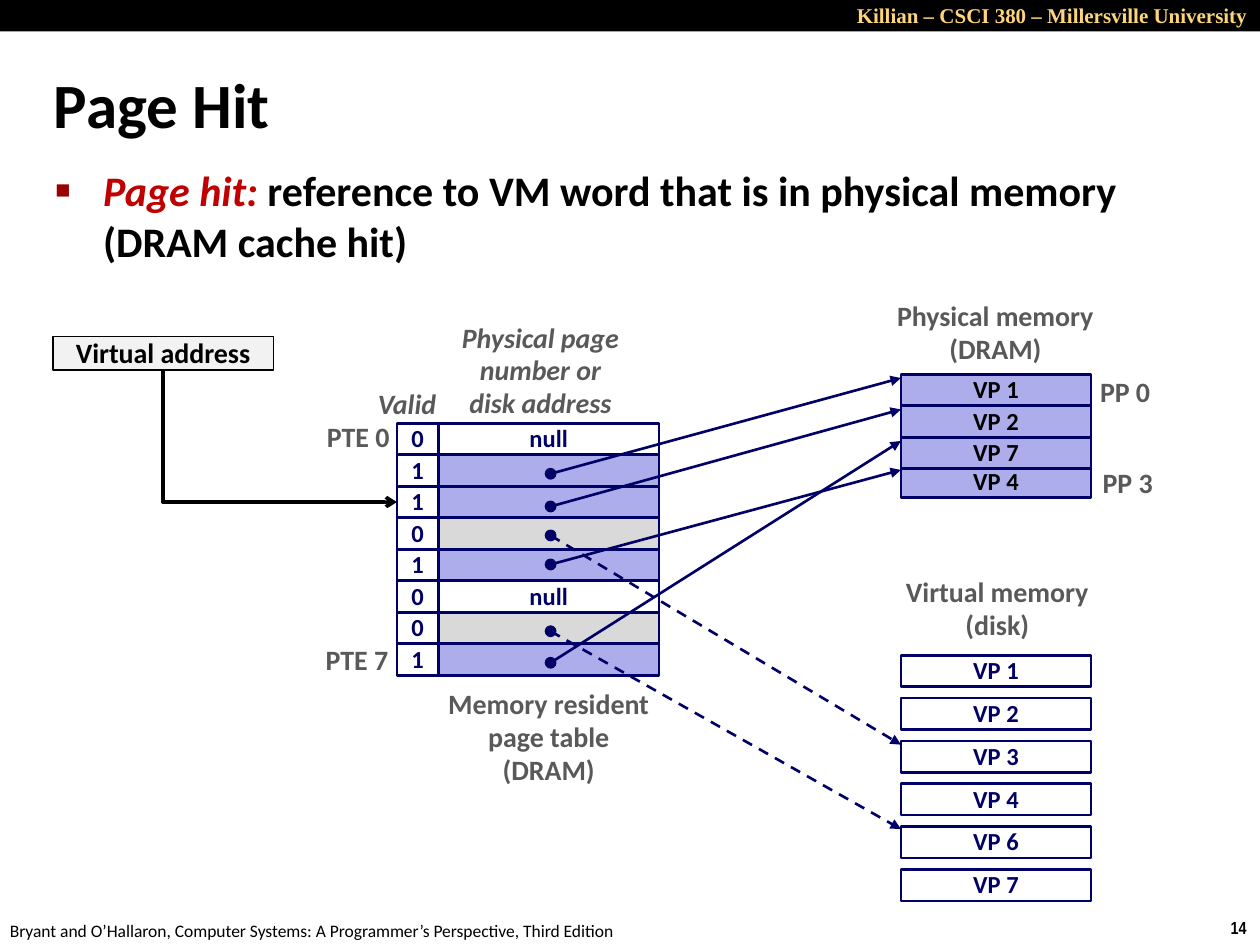
from dataclasses import dataclass

from lxml.etree import SubElement
from pptx import Presentation
from pptx.dml.color import RGBColor as RGB
from pptx.enum.dml import MSO_LINE_DASH_STYLE as Dash
from pptx.enum.shapes import MSO_CONNECTOR as Link, MSO_SHAPE as Shape
from pptx.enum.text import MSO_ANCHOR as Anchor, PP_ALIGN as Align
from pptx.oxml.ns import qn
from pptx.util import Inches, Pt


@dataclass(frozen=True)
class Theme:
    """Colours, fonts and type sizes of the slide."""
    black: str = "000000"
    white: str = "FFFFFF"
    navy: str = "000066"
    lilac: str = "ADADEB"
    silver: str = "D9D9D9"
    pale: str = "F2F2F2"
    grey: str = "595959"
    gold: str = "FFD579"
    red: str = "C00000"
    bullet: str = "990000"
    sans: str = "Calibri"
    serif: str = "Times New Roman"
    narrow: str = "Arial Narrow"
    small: int = 10
    header: int = 12
    cell: int = 14
    label: int = 16
    body: int = 24
    title: int = 36


T = Theme()
TABLE_X, TABLE_Y, VALID_W, ENTRY_W = 12.6, 13.44, 1.32, 7
MEMORY_X, MEMORY_W, DISK_Y, DISK_STEP = 28.6, 6.04, 20.8, 1.36
DOT_X, DOT_SIZE = 17.48, 0.32
ENTRIES = [("0", "null", T.white), ("1", "", T.lilac), ("1", "", T.lilac),
           ("0", "", T.silver), ("1", "", T.lilac), ("0", "null", T.white),
           ("0", "", T.silver), ("1", "", T.lilac)]
FRAMES = [("VP 1", 11.88), ("VP 2", 12.88), ("VP 7", 13.88), ("VP 4", 14.8)]
DISK_PAGES = ["VP 1", "VP 2", "VP 3", "VP 4", "VP 6", "VP 7"]
POINTERS = [(15.04, 12, False), (16.08, 13, False), (17, 23.64, True),
            (17.92, 14.92, False), (20.04, 26.32, True), (21.04, 14, False)]
LABELS = [("Memory resident\npage table\n(DRAM)", (13.72, 21.64, 7.4, 3.56), {}),
          ("Physical memory\n(DRAM)", (28.04, 9.32, 7.12, 2.52), {}),
          ("Virtual memory\n(disk)", (28.28, 18.08, 6.76, 2.52), {}),
          ("Valid", (11.42, 12.12, 3, 1.48), {"italic": True}),
          ("Physical page\nnumber or\ndisk address", (14.24, 10, 5.84, 3.56), {"italic": True}),
          ("PTE 0", (9.96, 13.16, 2.8, 1.48), {"align": Align.RIGHT}),
          ("PTE 7", (9.92, 20.24, 2.8, 1.48), {"align": Align.RIGHT}),
          ("PP 0", (34.52, 11.72, 2.4, 1.48), {}),
          ("PP 3", (34.6, 14.6, 2.4, 1.48), {})]


def grid(*units):
    """Turn columns or rows of the 40 by 30 grid into lengths."""
    return [Inches(u / 4) for u in units]


def style_run(r, size, color, name=T.sans, **fmt):
    """Format one run."""
    for key, value in {"size": Pt(size), "name": name, "bold": True, **fmt}.items():
        setattr(r.font, key, value)
    r.font.color.rgb = RGB.from_string(color)


def fill_text(tf, text, size, color, align=Align.CENTER, spacing=0.98, anchor=Anchor.MIDDLE, **fmt):
    """Write one paragraph for each line of the text."""
    for key, value in {"word_wrap": align == Align.LEFT, "vertical_anchor": anchor}.items():
        setattr(tf, key, value)
    for i, line in enumerate(text.split("\n")):
        p = tf.add_paragraph() if i else tf.paragraphs[0]
        p.alignment, p.line_spacing = align, spacing
        r = p.add_run()
        r.text = line
        style_run(r, size, color, **fmt)


def add_label(s, text, at, size=T.label, color=T.grey, **fmt):
    """Add a text box and return it."""
    sp = s.shapes.add_textbox(*grid(*at))
    fill_text(sp.text_frame, text, size, color, **fmt)
    return sp


def add_box(s, at, fill, line=T.navy, width=1.5, text="", color=T.navy, size=T.cell, kind=Shape.RECTANGLE):
    """Add a filled, outlined shape and return it."""
    sp = s.shapes.add_shape(kind, *grid(*at))
    sp.shadow.inherit = False
    sp.fill.solid()
    sp.fill.fore_color.rgb = RGB.from_string(fill)
    sp.line.color.rgb = RGB.from_string(line)
    sp.line.width = Pt(width)
    if text:
        fill_text(sp.text_frame, text, size, color)
    return sp


def add_arrow(s, ends, kind=Link.STRAIGHT, color=T.navy, width=1.5, head="triangle", dashed=False):
    """Add a connector with an arrowhead at its end."""
    c = s.shapes.add_connector(kind, *grid(*ends))
    c.line.color.rgb = RGB.from_string(color)
    c.line.width = Pt(width)
    if dashed:
        c.line.dash_style = Dash.DASH
    SubElement(c.line._get_or_add_ln(), qn("a:tailEnd"), type=head)
    SubElement(c._element.spPr, qn("a:effectLst"))
    return c


def join_down_right(s, start, end):
    """Link a box's bottom to another box's left side with one bend."""
    c = add_arrow(s, (0, 0, 1, 1), Link.ELBOW, T.black, 2, "arrow")
    c.begin_connect(start, 2)
    c.end_connect(end, 1)
    dx, dy = c.end_x - c.begin_x, c.end_y - c.begin_y
    place = {"left": c.begin_x + (dx - dy) // 2, "top": c.begin_y + (dy - dx) // 2,
             "width": dy, "height": dx}
    for key, value in place.items():
        setattr(c, key, value)
    xfrm = c._element.spPr.find(qn("a:xfrm"))
    for key, value in {"rot": "16200000", "flipH": "1"}.items():
        xfrm.set(key, value)
    c._element.spPr.find(qn("a:prstGeom")).set("prst", "bentConnector2")


def add_bullet(p, indent):
    """Give a paragraph a square bullet with a hanging indent."""
    pPr = p._p.get_or_add_pPr()
    pPr.set("marL", str(indent))
    pPr.set("indent", str(-indent))
    SubElement(SubElement(pPr, qn("a:buClr")), qn("a:srgbClr"), val=T.bullet)
    SubElement(pPr, qn("a:buSzPct"), val="60000")
    SubElement(pPr, qn("a:buFont"), typeface="Arial")
    SubElement(pPr, qn("a:buChar"), char="■")


def add_frame(s):
    """Add the header bar, footer, title and definition."""
    add_box(s, (0, 0, 40, 1), T.black).line.fill.background()
    add_label(s, "Killian – CSCI 380 – Millersville University", (26.76, -0.12, 13.24, 1.2),
              T.header, T.gold, name=T.serif, align=Align.RIGHT, spacing=1)
    add_label(s, "14", (38.64, 28.92, 1.36, 1.08), T.small, T.black, name=T.narrow, spacing=1)
    add_label(s, "Bryant and O’Hallaron, Computer Systems: A Programmer’s Perspective, Third Edition",
              (-0.08, 29, 20.32, 1.08), T.small, T.black, align=Align.LEFT, spacing=1, bold=False)
    add_label(s, "Page Hit", (1.32, 1.56, 36.24, 3.44), T.title, T.black, align=Align.LEFT, spacing=1)
    sp = add_label(s, "Page hit: ", (1.36, 5.04, 36.36, 2.64), T.body, T.red,
                   align=Align.LEFT, spacing=1, anchor=Anchor.TOP, italic=True)
    p = sp.text_frame.paragraphs[0]
    r = p.add_run()
    r.text = "reference to VM word that is in physical memory (DRAM cache hit)"
    style_run(r, T.body, T.black)
    add_bullet(p, Inches(0.38))


def add_page_table(s):
    """Add the page table and return its valid cells."""
    valid = []
    for i, (bit, text, fill) in enumerate(ENTRIES):
        y = TABLE_Y + i
        add_box(s, (TABLE_X + VALID_W, y, ENTRY_W, 1), fill, text=text)
        valid.append(add_box(s, (TABLE_X, y, VALID_W, 1), T.white, text=bit))
    return valid


def add_memories(s):
    """Add the physical frames and the pages on disk."""
    for name, y in reversed(FRAMES):
        add_box(s, (MEMORY_X, y, MEMORY_W, 1), T.lilac, text=name, color=T.black)
    for i, name in enumerate(DISK_PAGES):
        add_box(s, (MEMORY_X, DISK_Y + i * DISK_STEP, MEMORY_W, 1), T.white, text=name)


def add_pointers(s):
    """Add a dot and an arrow for each mapped entry."""
    for y, target, dashed in POINTERS:
        add_arrow(s, (DOT_X, y, MEMORY_X, target), dashed=dashed)
        corner = (DOT_X - DOT_SIZE / 2, y - DOT_SIZE / 2)
        add_box(s, (*corner, DOT_SIZE, DOT_SIZE), T.navy, width=1, kind=Shape.OVAL)


def main():
    """Build the slide and save it."""
    prs = Presentation()
    prs.slide_width, prs.slide_height = grid(40, 30)
    s = prs.slides.add_slide(prs.slide_layouts[6])
    add_frame(s)
    valid = add_page_table(s)
    add_memories(s)
    add_pointers(s)
    for text, at, fmt in LABELS:
        add_label(s, text, at, **fmt)
    address = add_box(s, (1.68, 10.68, 7, 1.08), T.pale, T.black, 1, "Virtual address", T.black, T.label)
    join_down_right(s, address, valid[2])
    prs.save("out.pptx")


if __name__ == "__main__":
    main()
